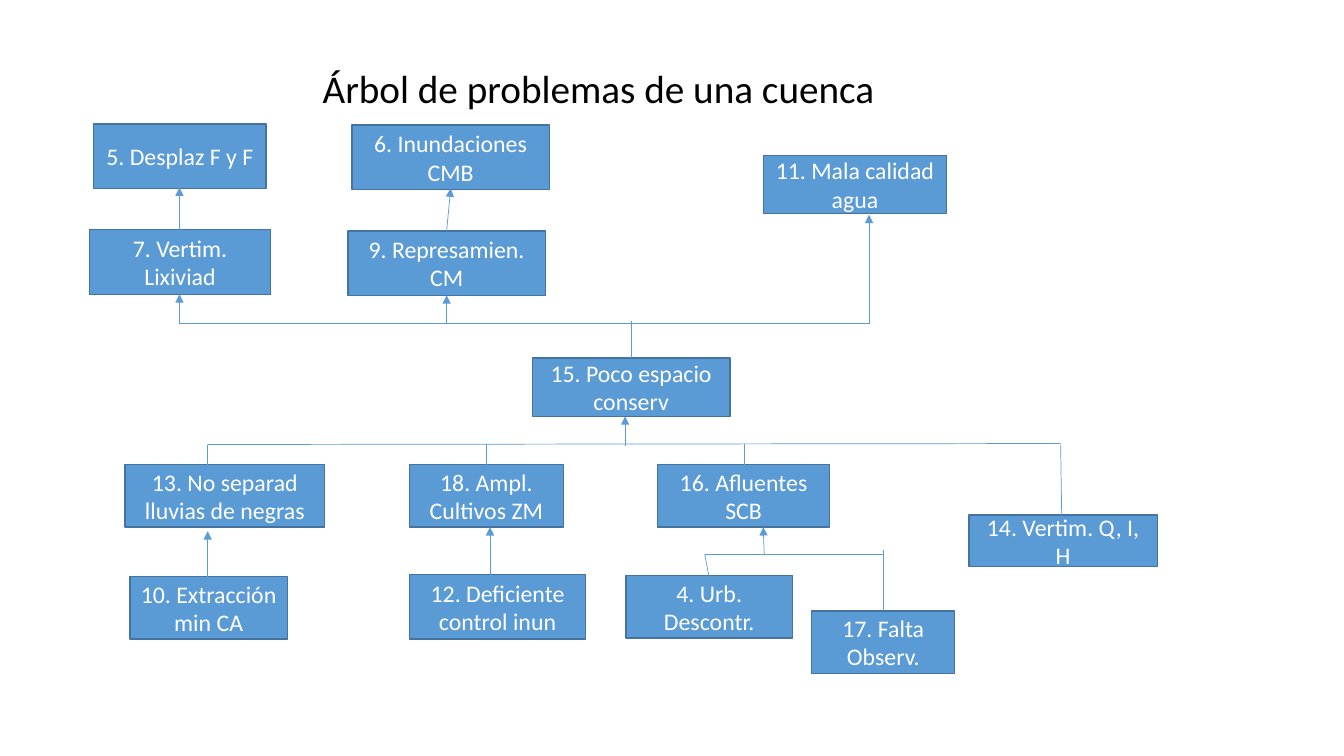
from lxml import etree
from pptx import Presentation
from pptx.dml.color import RGBColor
from pptx.enum.shapes import MSO_CONNECTOR as Conn, MSO_SHAPE as Shape
from pptx.enum.text import MSO_ANCHOR as Anchor, PP_ALIGN as Align
from pptx.oxml.ns import qn
from pptx.util import Inches, Pt

BLUE = RGBColor(0x5B, 0x9B, 0xD5)
EDGE = RGBColor(0x43, 0x73, 0x9E)
WHITE = RGBColor(0xFF, 0xFF, 0xFF)
BLACK = RGBColor(0, 0, 0)

BOXES = [
    ("5. Desplaz F y F", 0.93, 1.23, 1.71, 0.64),
    ("6. Inundaciones CMB", 3.49, 1.24, 1.96, 0.64),
    ("11. Mala calidad agua", 7.57, 1.54, 1.82, 0.58),
    ("7. Vertim. Lixiviad", 0.89, 2.28, 1.79, 0.64),
    ("9. Represamien. CM", 3.45, 2.29, 1.96, 0.64),
    ("15. Poco espacio conserv", 5.28, 3.55, 1.96, 0.58),
    ("13. No separad lluvias de negras", 1.24, 4.61, 1.98, 0.62),
    ("18. Ampl. Cultivos ZM", 4.06, 4.61, 1.53, 0.62),
    ("16. Afluentes SCB", 6.52, 4.61, 1.71, 0.62),
    ("14. Vertim. Q, I, H", 9.61, 5.11, 1.87, 0.51),
    ("10. Extracción min CA", 1.29, 5.72, 1.56, 0.62),
    ("12. Deficiente control inun", 4.06, 5.7, 1.75, 0.64),
    ("4. Urb. Descontr.", 6.21, 5.71, 1.65, 0.62),
    ("17. Falta Observ.", 8.05, 6.06, 1.42, 0.62),
]

LINES = [
    (1.78, 3.21, 8.62, 3.21),
    (6.26, 3.55, 6.26, 3.18),
    (2.06, 4.41, 10.52, 4.4),
    (2.06, 4.41, 2.06, 4.61),
    (4.82, 4.4, 4.82, 4.61),
    (7.38, 4.4, 7.38, 4.61),
    (10.52, 4.41, 10.53, 5.11),
    (6.99, 5.5, 8.76, 5.5),
    (7.03, 5.71, 6.99, 5.5),
    (8.76, 5.46, 8.76, 6.06),
]

ARROWS = [
    (1.78, 2.28, 1.78, 1.86),
    (4.43, 2.29, 4.47, 1.87),
    (1.78, 3.21, 1.78, 2.92),
    (4.43, 3.21, 4.43, 2.93),
    (8.62, 3.21, 8.62, 2.13),
    (6.2, 4.42, 6.2, 4.13),
    (2.06, 5.72, 2.06, 5.27),
    (4.86, 5.7, 4.86, 5.23),
    (7.58, 5.5, 7.57, 5.23),
]


def apply(obj, form):
    """Set each attribute named in form on obj."""
    for name, value in form.items():
        setattr(obj, name, value)


class Tree:
    """Holds the slide and the style of the problem tree."""

    frame = {"word_wrap": True, "vertical_anchor": Anchor.MIDDLE}
    label = {"name": "Calibri", "size": Pt(17)}
    head = {"name": "Calibri", "size": Pt(28)}

    def __init__(self, slide):
        self.slide = slide

    def put_text(self, shape, text, font, color, align, frame):
        apply(shape.text_frame, frame)
        para = shape.text_frame.paragraphs[0]
        para.alignment = align
        run = para.add_run()
        run.text = text
        apply(run.font, font)
        run.font.color.rgb = color

    def title(self, text, left, top, width, height):
        shape = self.slide.shapes.title
        apply(shape, {"left": Inches(left), "top": Inches(top),
                      "width": Inches(width), "height": Inches(height)})
        frame = {**self.frame, "vertical_anchor": Anchor.TOP}
        self.put_text(shape, text, self.head, BLACK, Align.LEFT, frame)

    def box(self, text, *place):
        shape = self.slide.shapes.add_shape(Shape.RECTANGLE, *map(Inches, place))
        shape.shadow.inherit = False
        shape.fill.solid()
        shape.fill.fore_color.rgb = BLUE
        shape.line.color.rgb = EDGE
        shape.line.width = Pt(1)
        self.put_text(shape, text, self.label, WHITE, Align.CENTER, self.frame)

    def line(self, *ends, arrow=False):
        link = self.slide.shapes.add_connector(Conn.STRAIGHT, *map(Inches, ends))
        link.line.color.rgb = BLUE
        link.line.width = Pt(0.5)
        props = link._element.spPr
        if arrow:
            etree.SubElement(props.find(qn("a:ln")), qn("a:tailEnd"), type="triangle")
        etree.SubElement(props, qn("a:effectLst"))


def main():
    deck = Presentation()
    apply(deck, {"slide_width": Inches(13.33), "slide_height": Inches(7.5)})
    tree = Tree(deck.slides.add_slide(deck.slide_layouts[5]))
    tree.title("Árbol de problemas de una cuenca", 3.1, 0.59, 6.71, 0.57)
    for box in BOXES:
        tree.box(*box)
    for ends in LINES:
        tree.line(*ends)
    for ends in ARROWS:
        tree.line(*ends, arrow=True)
    deck.save("out.pptx")


if __name__ == "__main__":
    main()
